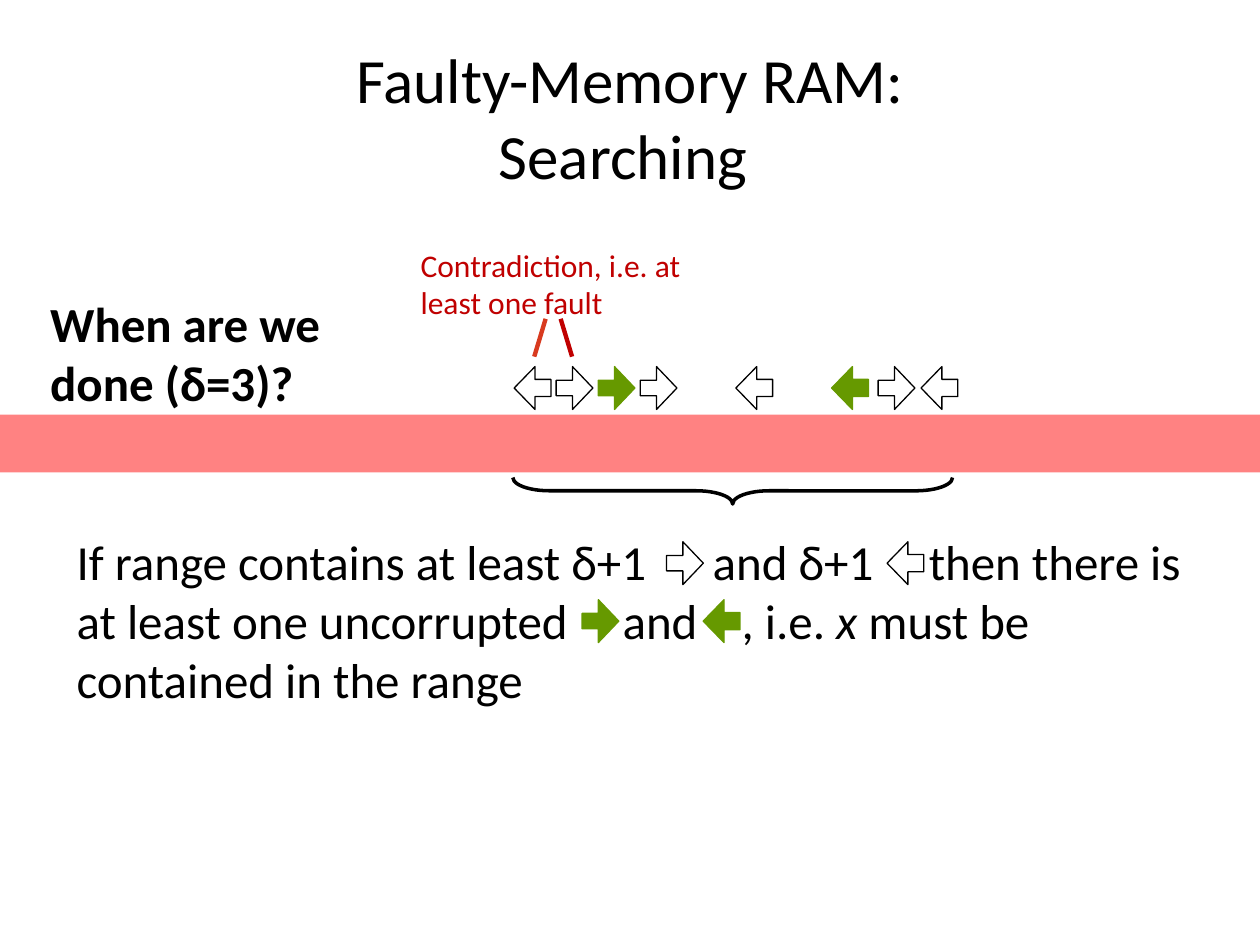
from lxml.etree import SubElement
from pptx import Presentation
from pptx.dml.color import RGBColor
from pptx.enum.shapes import MSO_CONNECTOR as Connector, MSO_SHAPE as Shape
from pptx.enum.text import MSO_ANCHOR as Anchor, PP_ALIGN as Align
from pptx.oxml.ns import qn
from pptx.util import Pt

BLACK = RGBColor(0x00, 0x00, 0x00)
WHITE = RGBColor(0xFF, 0xFF, 0xFF)
RED = RGBColor(0xFF, 0x00, 0x00)
DARK_RED = RGBColor(0xC0, 0x00, 0x00)
ORANGE_RED = RGBColor(0xD8, 0x3A, 0x1F)
GREEN = RGBColor(0x66, 0x99, 0x00)

ARROWS = {
    "right": (Shape.RIGHT_ARROW, (0.361, 0.556)),
    "left": (Shape.LEFT_ARROW, (0.402, 0.568)),
}


def add_text(paragraph, text, size=28, color=BLACK, bold=False, italic=False, font="Calibri"):
    run = paragraph.add_run()
    run.text = text
    run.font.name = font
    run.font.size = Pt(size)
    run.font.color.rgb = color
    run.font.bold = bold
    run.font.italic = italic


class SlideBuilder:
    arrow_size = (21, 24.5)
    outline = 0.75

    def __init__(self, slide):
        self.slide = slide

    def title(self, lines, box):
        shape = self.slide.shapes.title
        shape.left, shape.top, shape.width, shape.height = map(Pt, box)
        frame = shape.text_frame
        frame.vertical_anchor = Anchor.MIDDLE
        paragraph = frame.paragraphs[0]
        paragraph.alignment = Align.CENTER
        add_text(paragraph, lines[0], size=36)
        for line in lines[1:]:
            paragraph.add_line_break()
            add_text(paragraph, line, size=36)

    def text_box(self, box):
        shape = self.slide.shapes.add_textbox(*map(Pt, box))
        shape.text_frame.word_wrap = True
        return shape.text_frame.paragraphs[0]

    def tab_stops(self, paragraph, positions):
        tab_list = SubElement(paragraph._p.get_or_add_pPr(), qn("a:tabLst"))
        for position in positions:
            SubElement(tab_list, qn("a:tab"), pos=str(Pt(position)), algn="l")

    def shape(self, kind, box, adjustments=(), fill=None, line=None, width=outline):
        shape = self.slide.shapes.add_shape(kind, *map(Pt, box))
        shape.shadow.inherit = False
        for index, value in enumerate(adjustments):
            shape.adjustments[index] = value
        if fill is None:
            shape.fill.background()
        else:
            shape.fill.solid()
            shape.fill.fore_color.rgb = fill
        if line is None:
            shape.line.fill.background()
        else:
            shape.line.color.rgb = line
            shape.line.width = Pt(width)
        return shape

    def band(self, box, color, opacity):
        shape = self.shape(Shape.RECTANGLE, box, fill=color)
        color_element = shape._element.spPr.find(qn("a:solidFill"))[0]
        SubElement(color_element, qn("a:alpha"), val=str(opacity * 1000))

    def arrow(self, direction, left, top, certain=False):
        kind, adjustments = ARROWS[direction]
        fill, line = (GREEN, GREEN) if certain else (WHITE, BLACK)
        self.shape(kind, (left, top, *self.arrow_size), adjustments, fill, line)

    def brace(self, box):
        shape = self.shape(Shape.RIGHT_BRACE, box, (1.383, 0.5), line=BLACK, width=2)
        shape.rotation = 90

    def line(self, start, end, color):
        connector = self.slide.shapes.add_connector(
            Connector.STRAIGHT, *map(Pt, (*start, *end)))
        connector.line.color.rgb = color
        connector.line.width = Pt(2.5)
        SubElement(connector._element.spPr, qn("a:effectLst"))


def main():
    presentation = Presentation()
    presentation.slide_width, presentation.slide_height = Pt(720), Pt(540)
    builder = SlideBuilder(presentation.slides.add_slide(presentation.slide_layouts[5]))

    builder.title(("Faulty-Memory RAM:", "Searching "), (36, 21.6, 648, 90))
    builder.band((0, 236.9, 720, 33.1), RED, 49)

    question = builder.text_box((21.6, 164.2, 202.3, 74.2))
    add_text(question, "When are we done (δ=3)?", bold=True)

    row_top, row_left, step = 209.5, 293.8, 24
    comparisons = [("left", False), ("right", False), ("right", True), ("right", False)]
    for index, (direction, certain) in enumerate(comparisons):
        builder.arrow(direction, row_left + index * step, row_top, certain)
    for direction, left, certain in [
        ("left", 420.5, False),
        ("left", 475.2, True),
        ("right", 501.8, False),
        ("left", 526.3, False),
    ]:
        builder.arrow(direction, left, row_top, certain)

    builder.line((305.3, 203.8), (311.8, 182.2), ORANGE_RED)
    builder.line((326.9, 203.8), (320.4, 182.2), DARK_RED)
    contradiction = builder.text_box((233.3, 136.8, 163.4, 50.4))
    add_text(contradiction, "Contradiction, i.e. at least one fault", size=18, color=DARK_RED)
    builder.brace((411.1, 154.8, 15.1, 251.3))

    conclusion = builder.text_box((36.7, 300.2, 659.5, 108))
    builder.tab_stops(conclusion, (312, 363.5, 380, 487))
    add_text(conclusion, "If range contains at least δ+1\tand δ+1\tthen there is "
                         "at least one uncorrupted\tand\t\t, i.e. ")
    add_text(conclusion, "x", italic=True)
    add_text(conclusion, " must be contained in the range")

    for direction, left, top, certain in [
        ("right", 380.9, 309.6, False),
        ("left", 506.9, 309.6, False),
        ("right", 332.6, 342.7, True),
        ("left", 401.8, 342.7, True),
    ]:
        builder.arrow(direction, left, top, certain)

    presentation.save("out.pptx")


if __name__ == "__main__":
    main()
